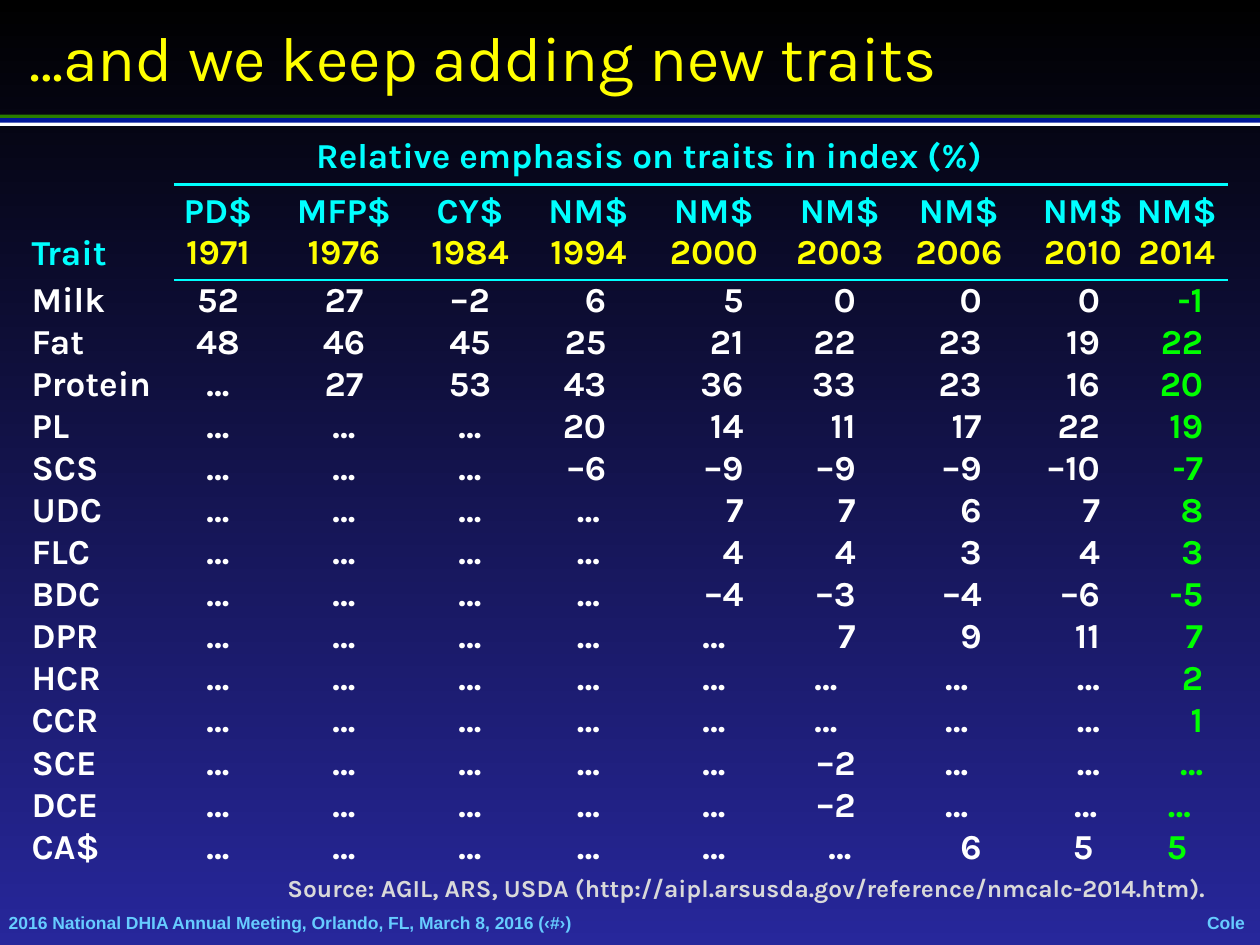
"""Builds a slide with a table of trait emphasis in successive genetic indexes."""
from lxml import etree
from pptx import Presentation
from pptx import util as u
from pptx.dml import color as dml
from pptx.enum import shapes, text
from pptx.oxml import ns

rgb = dml.RGBColor.from_string
LEFT, CENTER, RIGHT = text.PP_ALIGN.LEFT, text.PP_ALIGN.CENTER, text.PP_ALIGN.RIGHT
CYAN, YELLOW, WHITE, GREEN = "00FFFF", "FFFF00", "FFFFFF", "00FF00"


def write(frame, *lines, size=20, color=WHITE, font="Karla", bold=True, align=LEFT,
          anchor=text.MSO_ANCHOR.TOP, margins=(0, 0, 0, 0), last_color=None):
    """Fill a text frame or table cell, one paragraph for each line."""
    frame.margin_left, frame.margin_top, frame.margin_right, frame.margin_bottom = map(u.Pt, margins)
    frame.vertical_anchor = anchor
    body = getattr(frame, "text_frame", frame)
    for index, line in enumerate(lines):
        paragraph = body.add_paragraph() if index else body.paragraphs[0]
        paragraph.alignment = align
        run = paragraph.add_run()
        run.text = line
        run.font.size, run.font.name, run.font.bold = u.Pt(size), font, bold
        last = last_color and index == len(lines) - 1
        run.font.color.rgb = rgb(last_color if last else color)


def add_border(cell, edge):
    """Draw a cyan rule on one edge of a table cell."""
    line = etree.Element(ns.qn(f"a:{edge}"), w=str(u.Pt(1.5)))
    fill = etree.SubElement(line, ns.qn("a:solidFill"))
    etree.SubElement(fill, ns.qn("a:srgbClr"), val=CYAN)
    cell._tc.get_or_add_tcPr().insert(0, line)


presentation = Presentation()
presentation.slide_width, presentation.slide_height = u.Pt(720), u.Pt(540)
slide = presentation.slides.add_slide(presentation.slide_layouts[5])
background = slide.background.fill
background.gradient()
background.gradient_angle = 270
for stop, shade in zip(background.gradient_stops, ("000000", "27279B")):
    stop.color.rgb = rgb(shade)

for top, height, shade in ((65.5, 2.2, "2A7E00"), (69.8, 2.2, WHITE), (67.5, 2.6, "001799")):
    bar = slide.shapes.add_shape(shapes.MSO_SHAPE.RECTANGLE, 0, u.Pt(top), u.Pt(720), u.Pt(height))
    bar.shadow.inherit = False
    bar.fill.solid()
    bar.fill.fore_color.rgb = rgb(shade)
    bar.line.fill.background()

title = slide.shapes.title
title.left, title.top, title.width, title.height = map(u.Pt, (9.4, 9.4, 698.4, 46))
title.text_frame.auto_size = text.MSO_AUTO_SIZE.NONE
write(title.text_frame, "…and we keep adding new traits", size=36, color=YELLOW, bold=False,
      anchor=text.MSO_ANCHOR.MIDDLE, margins=(7.2, 3.6, 7.2, 3.6))

indexes = [("PD$", "1971"), ("MFP$", "1976"), ("CY$", "1984"), ("NM$", "1994"), ("NM$", "2000"),
           ("NM$", "2003"), ("NM$", "2006"), ("NM$", "2010"), ("NM$", "2014")]
traits = [
    "Milk 52 27 –2 6 5 0 0 0 -1",
    "Fat 48 46 45 25 21 22 23 19 22",
    "Protein … 27 53 43 36 33 23 16 20",
    "PL … … … 20 14 11 17 22 19",
    "SCS … … … –6 –9 –9 –9 –10 -7",
    "UDC … … … … 7 7 6 7 8",
    "FLC … … … … 4 4 3 4 3",
    "BDC … … … … –4 –3 –4 –6 -5",
    "DPR … … … … … 7 9 11 7",
    "HCR … … … … … … … … 2",
    "CCR … … … … … … … … 1",
    "SCE … … … … … –2 … … …",
    "DCE … … … … … –2 … … …",
    "CA$ … … … … … … 6 5 5",
]
column_widths = [81.4, 50.4, 93.6, 50.4, 85, 58.3, 85.7, 72, 48.2, 59]
row_heights = [27.7, 54.6] + [24.05] * len(traits)
number_insets = {4: 32.4, 5: 12.2, 6: 33.8, 7: 33.8, 8: 14.4, 9: 14.4}

table = slide.shapes.add_table(len(row_heights), len(column_widths), u.Pt(18), u.Pt(77.8),
                               u.Pt(sum(column_widths)), u.Pt(sum(row_heights))).table
table.first_row = table.horz_banding = False
table._tbl.tblPr.find(ns.qn("a:tableStyleId")).text = "{2D5ABB26-0587-4C30-8999-92F81FD0307C}"
for column, width in zip(table.columns, column_widths):
    column.width = u.Pt(width)
for row, height in zip(table.rows, row_heights):
    row.height = u.Pt(height)
for cell in table.iter_cells():
    cell.fill.background()
    cell.margin_top = cell.margin_bottom = 0

table.cell(0, 0).merge(table.cell(1, 0))
table.cell(0, 1).merge(table.cell(0, 8))
write(table.cell(0, 0), "Trait", color=CYAN, anchor=text.MSO_ANCHOR.BOTTOM, margins=(0, 0, 0, 3.6))
write(table.cell(0, 1), "Relative emphasis on traits in index (%)", color=CYAN, align=CENTER,
      margins=(0, 0, 0, 3.6))
for column, lines in enumerate(indexes, 1):
    write(table.cell(1, column), *lines, color=CYAN, last_color=YELLOW, align=CENTER,
          margins=(0, 3.6, 21.6 if column == 7 else 0, 3.6))
    add_border(table.cell(0, column), "lnB")
    add_border(table.cell(1, column), "lnT")

for row, trait in enumerate(traits, 2):
    name, *values = trait.split()
    write(table.cell(row, 0), name)
    for column, value in enumerate(values, 1):
        if column >= 8:
            to_right = name not in ("DCE", "CA$")
        else:
            to_right = column >= 4 and value != "…"
        left = 3 if name == "DCE" and column >= 8 else 0
        right = 0
        if to_right:
            right = number_insets[column]
        elif column == 7:
            right = 24
        elif column == 6 and name in ("HCR", "CCR"):
            right = 16
        write(table.cell(row, column), value, color=GREEN if column == 9 else WHITE,
              align=RIGHT if to_right else CENTER, margins=(left, 0, right, 0))

source = "Source: AGIL, ARS, USDA (http://aipl.arsusda.gov/reference/nmcalc-2014.htm)."
meeting = "2016 National DHIA Annual Meeting, Orlando, FL, March 8, 2016 (‹#›)"
footer = dict(size=10, color="66CCFF", font="Arial", anchor=text.MSO_ANCHOR.MIDDLE)
notes = [
    ((72, 495.4, 624.2, 24.5), source, True,
     dict(size=14, color="D9D9D9", align=RIGHT, margins=(7.2, 3.6, 7.2, 3.6))),
    ((5, 521.3, 582.5, 12.2), meeting, True, footer),
    ((689.8, 520.9, 21.6, 12.2), "Cole", False, dict(footer, align=CENTER)),
]
for place, words, wrap, style in notes:
    box = slide.shapes.add_textbox(*map(u.Pt, place))
    box.text_frame.word_wrap = wrap
    write(box.text_frame, words, **style)

presentation.save("out.pptx")
